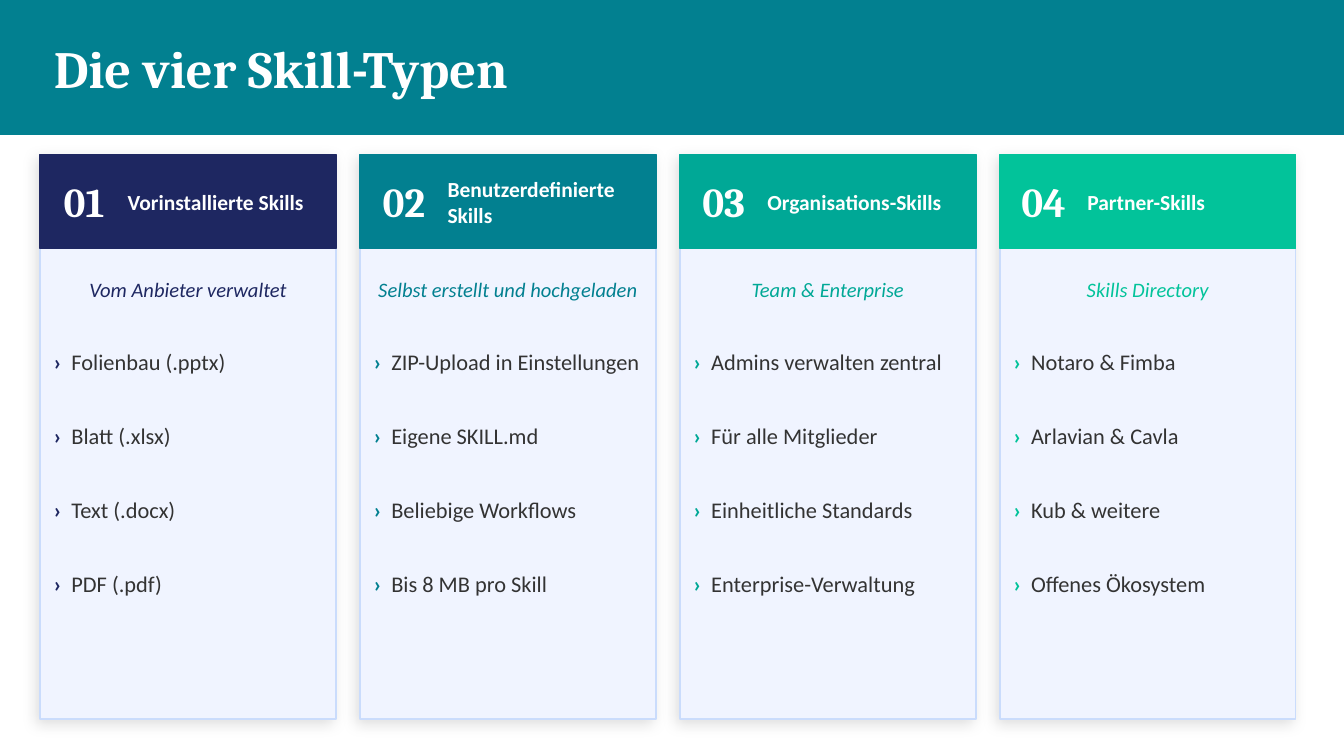
"""Build the slide on the four skill types as a row of cards."""
from lxml import etree
from pptx import Presentation
from pptx.dml.color import RGBColor
from pptx.enum.shapes import MSO_SHAPE
from pptx.enum.text import MSO_ANCHOR, MSO_AUTO_SIZE, PP_ALIGN
from pptx.oxml.ns import qn
from pptx.util import Inches, Pt

RECTANGLE = MSO_SHAPE.RECTANGLE
MIDDLE = MSO_ANCHOR.MIDDLE
NO_FIT = MSO_AUTO_SIZE.NONE
LEFT, CENTER = PP_ALIGN.LEFT, PP_ALIGN.CENTER

CELL = 0.1
COLUMNS, ROWS = 100, 56.25
HEADING, BODY = "Cambria", "Calibri"
WHITE, INK, TEAL = "FFFFFF", "333333", "028090"
CARD_FILL, CARD_EDGE = "F0F4FF", "CADCFC"

CARD_LEFT, CARD_TOP, CARD_WIDTH, CARD_HEIGHT = 3, 11.5, 22, 42
CARD_PITCH, HEADER_HEIGHT, NUMBER_WIDTH = 23.8, 7, 6.5
ITEM_TOP, ITEM_PITCH, ITEM_HEIGHT, ITEM_INSET = 24.5, 5.5, 4.8, 1
ITEM_INDENT = 1.32

SKILL_TYPES = [
    ("1E2761", "Vorinstallierte Skills", "Vom Anbieter verwaltet",
     ["Folienbau (.pptx)", "Blatt (.xlsx)", "Text (.docx)", "PDF (.pdf)"]),
    (TEAL, "Benutzerdefinierte Skills", "Selbst erstellt und hochgeladen",
     ["ZIP-Upload in Einstellungen", "Eigene SKILL.md",
      "Beliebige Workflows", "Bis 8 MB pro Skill"]),
    ("00A896", "Organisations-Skills", "Team & Enterprise",
     ["Admins verwalten zentral", "Für alle Mitglieder",
      "Einheitliche Standards", "Enterprise-Verwaltung"]),
    ("02C39A", "Partner-Skills", "Skills Directory",
     ["Notaro & Fimba", "Arlavian & Cavla", "Kub & weitere",
      "Offenes Ökosystem"]),
]


def rgb(code):
    return RGBColor.from_string(code)


def cells(*counts):
    return [Inches(count * CELL) for count in counts]


class SlideStyle:
    def __init__(self, slide):
        self.slide = slide

    def font(self, run, size, color, family=BODY, bold=False, italic=False):
        run.font.size, run.font.name = Pt(size), family
        run.font.bold, run.font.italic = bold, italic
        run.font.color.rgb = rgb(color)

    def frame(self, shape, text, align):
        frame = shape.text_frame
        frame.text = text
        frame.word_wrap, frame.auto_size = True, NO_FIT
        frame.vertical_anchor = MIDDLE
        frame.margin_left = frame.margin_right = 0
        frame.margin_top = frame.margin_bottom = 0
        frame.paragraphs[0].alignment = align
        return frame.paragraphs[0]

    def title(self, text, area):
        title = self.slide.shapes.title
        title.left, title.top, title.width, title.height = cells(*area)
        paragraph = self.frame(title, text, LEFT)
        self.font(paragraph.runs[0], 28, WHITE, HEADING, bold=True)

    def panel(self, area, fill, edge=None):
        panel = self.slide.shapes.add_shape(RECTANGLE, *cells(*area))
        panel.shadow.inherit = False
        panel.fill.solid()
        panel.fill.fore_color.rgb = rgb(fill)
        panel.line.color.rgb = rgb(edge or fill)
        panel.line.width = Pt(1)
        return panel

    def band(self, area, fill):
        band = self.panel(area, fill)
        self.slide.shapes.title._element.addprevious(band._element)

    def shadowed_panel(self, area, fill, edge):
        panel = self.panel(area, fill, edge)
        effects = panel._element.spPr.find(qn("a:effectLst"))
        shadow = etree.SubElement(
            effects, qn("a:outerShdw"), blurRad=str(Pt(8)), dist=str(Pt(3)),
            dir=str(135 * 60000), algn="bl", rotWithShape="0")
        black = etree.SubElement(shadow, qn("a:srgbClr"), val="000000")
        etree.SubElement(black, qn("a:alpha"), val="12000")

    def label(self, area, text, size, color, align=LEFT, **look):
        box = self.slide.shapes.add_textbox(*cells(*area))
        paragraph = self.frame(box, text, align)
        self.font(paragraph.runs[0], size, color, **look)
        return paragraph

    def item(self, area, text, accent):
        paragraph = self.label(area, "›\t", 12, accent, bold=True)
        indent = str(cells(ITEM_INDENT)[0])
        properties = paragraph._p.get_or_add_pPr()
        properties.set("marL", indent)
        properties.set("indent", "-" + indent)
        stops = etree.SubElement(properties, qn("a:tabLst"))
        etree.SubElement(stops, qn("a:tab"), pos=indent, algn="l")
        wording = paragraph.add_run()
        wording.text = text
        self.font(wording, 12, INK)

    def card(self, index, accent, name, source, items):
        left = CARD_LEFT + index * CARD_PITCH
        name_left = left + NUMBER_WIDTH
        name_width = CARD_WIDTH - NUMBER_WIDTH
        self.shadowed_panel((left, CARD_TOP, CARD_WIDTH, CARD_HEIGHT),
                            CARD_FILL, CARD_EDGE)
        self.panel((left, CARD_TOP, CARD_WIDTH, HEADER_HEIGHT), accent)
        self.label((left, CARD_TOP, NUMBER_WIDTH, HEADER_HEIGHT),
                   f"{index + 1:02}", 22, WHITE, CENTER,
                   family=HEADING, bold=True)
        self.label((name_left, CARD_TOP, name_width, HEADER_HEIGHT),
                   name, 11.5, WHITE, bold=True)
        self.label((left, CARD_TOP + HEADER_HEIGHT + 1, CARD_WIDTH, 4),
                   source, 11, accent, CENTER, italic=True)
        for row, text in enumerate(items):
            self.item((left + ITEM_INSET, ITEM_TOP + row * ITEM_PITCH,
                       CARD_WIDTH - 2 * ITEM_INSET, ITEM_HEIGHT),
                      text, accent)


def main():
    deck = Presentation()
    deck.slide_width, deck.slide_height = cells(COLUMNS, ROWS)
    style = SlideStyle(deck.slides.add_slide(deck.slide_layouts[5]))
    style.band((0, 0, COLUMNS, 10), TEAL)
    style.title("Die vier Skill-Typen", (4, 0, COLUMNS - 8, 10))
    for index, skill_type in enumerate(SKILL_TYPES):
        style.card(index, *skill_type)
    deck.save("out.pptx")


if __name__ == "__main__":
    main()
